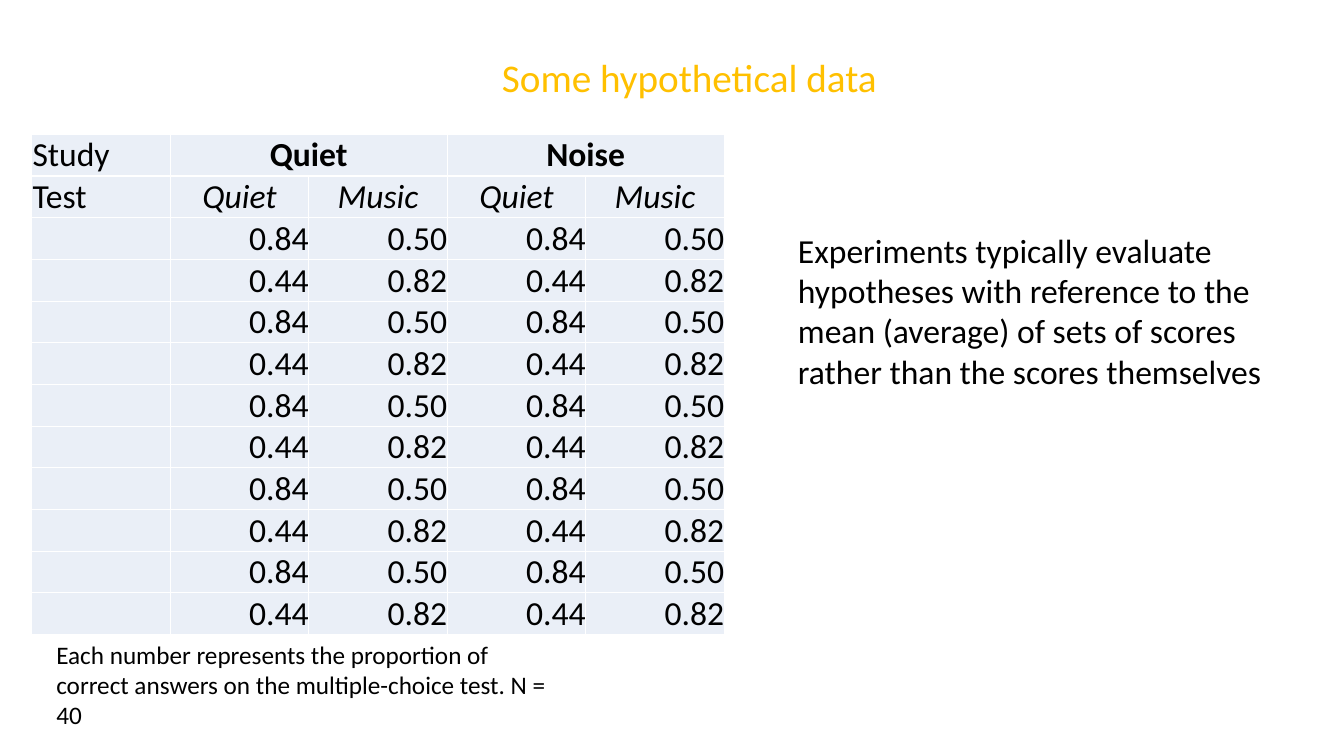
import pptx
import pptx.dml.color
import pptx.enum.text
import pptx.util
from pptx.util import Cm

ALIGN = pptx.enum.text.PP_ALIGN
ANCHOR = pptx.enum.text.MSO_ANCHOR
BLACK = pptx.dml.color.RGBColor(0x00, 0x00, 0x00)
GOLD = pptx.dml.color.RGBColor(0xFF, 0xC0, 0x00)
PALE_BLUE = pptx.dml.color.RGBColor(0xEA, 0xEF, 0xF7)
FONT = "Calibri"

STUDY = ["Study", "Quiet", "", "Noise", ""]
TEST = ["Test", "Quiet", "Music", "Quiet", "Music"]
SCORE_PAIR = [
    ["", "0.84", "0.50", "0.84", "0.50"],
    ["", "0.44", "0.82", "0.44", "0.82"],
]
ROWS = [STUDY, TEST] + SCORE_PAIR * 5
STUDY_SPANS = [(1, 2), (3, 4)]

# text, left, top, width, height (cm), size, colour, wrap
TEXTS = [
    ("Each number represents the proportion of correct answers "
     "on the multiple-choice test. N = 40",
     1.17, 15.98, 13.03, 2.57, 18, BLACK, True),
    ("Experiments typically evaluate hypotheses with reference to the mean "
     "(average) of sets of scores rather than the scores themselves",
     19.86, 5.66, 13.03, 7.19, 24, BLACK, True),
    ("Some hypothetical data", 12.4, 1.22, 12.4, 1.45, 28, GOLD, False),
]

TABLE_LEFT, TABLE_TOP = 0.8, 3.38
COLUMN_WIDTH, ROW_HEIGHT = 3.49, 1.05


def style(paragraph, size, color):
    paragraph.font.name = FONT
    paragraph.font.size = pptx.util.Pt(size)
    paragraph.font.color.rgb = color


def fill_cell(cell, text, row, column):
    is_heading = row < 2
    cell.fill.solid()
    cell.fill.fore_color.rgb = PALE_BLUE
    cell.margin_left = cell.margin_right = cell.margin_top = Cm(0.02 if is_heading else 0)
    cell.margin_bottom = Cm(0)
    cell.vertical_anchor = ANCHOR.MIDDLE if is_heading and column else ANCHOR.BOTTOM
    cell.text = text
    paragraph = cell.text_frame.paragraphs[0]
    style(paragraph, 24, BLACK)
    if column:
        paragraph.alignment = ALIGN.CENTER if is_heading else ALIGN.RIGHT
        paragraph.font.bold = row == 0
        paragraph.font.italic = row == 1


def add_scores(slide):
    row_count, column_count = len(ROWS), len(TEST)
    scores = slide.shapes.add_table(
        row_count, column_count, Cm(TABLE_LEFT), Cm(TABLE_TOP),
        Cm(COLUMN_WIDTH * column_count), Cm(ROW_HEIGHT * row_count)).table
    scores.first_row = False
    scores.horz_banding = False
    for column in scores.columns:
        column.width = Cm(COLUMN_WIDTH)
    for row in scores.rows:
        row.height = Cm(ROW_HEIGHT)
    for r, values in enumerate(ROWS):
        for c, value in enumerate(values):
            fill_cell(scores.cell(r, c), value, r, c)
    for first, last in STUDY_SPANS:
        scores.cell(0, first).merge(scores.cell(0, last))


def add_text(slide, text, left, top, width, height, size, color, wrap):
    frame = slide.shapes.add_textbox(Cm(left), Cm(top), Cm(width), Cm(height)).text_frame
    frame.word_wrap = wrap
    frame.auto_size = pptx.enum.text.MSO_AUTO_SIZE.SHAPE_TO_FIT_TEXT
    frame.text = text
    style(frame.paragraphs[0], size, color)


def main():
    deck = pptx.Presentation()
    deck.slide_width, deck.slide_height = Cm(33.87), Cm(19.05)
    slide = deck.slides.add_slide(deck.slide_layouts[6])
    add_scores(slide)
    for entry in TEXTS:
        add_text(slide, *entry)
    deck.save("out.pptx")


if __name__ == "__main__":
    main()
